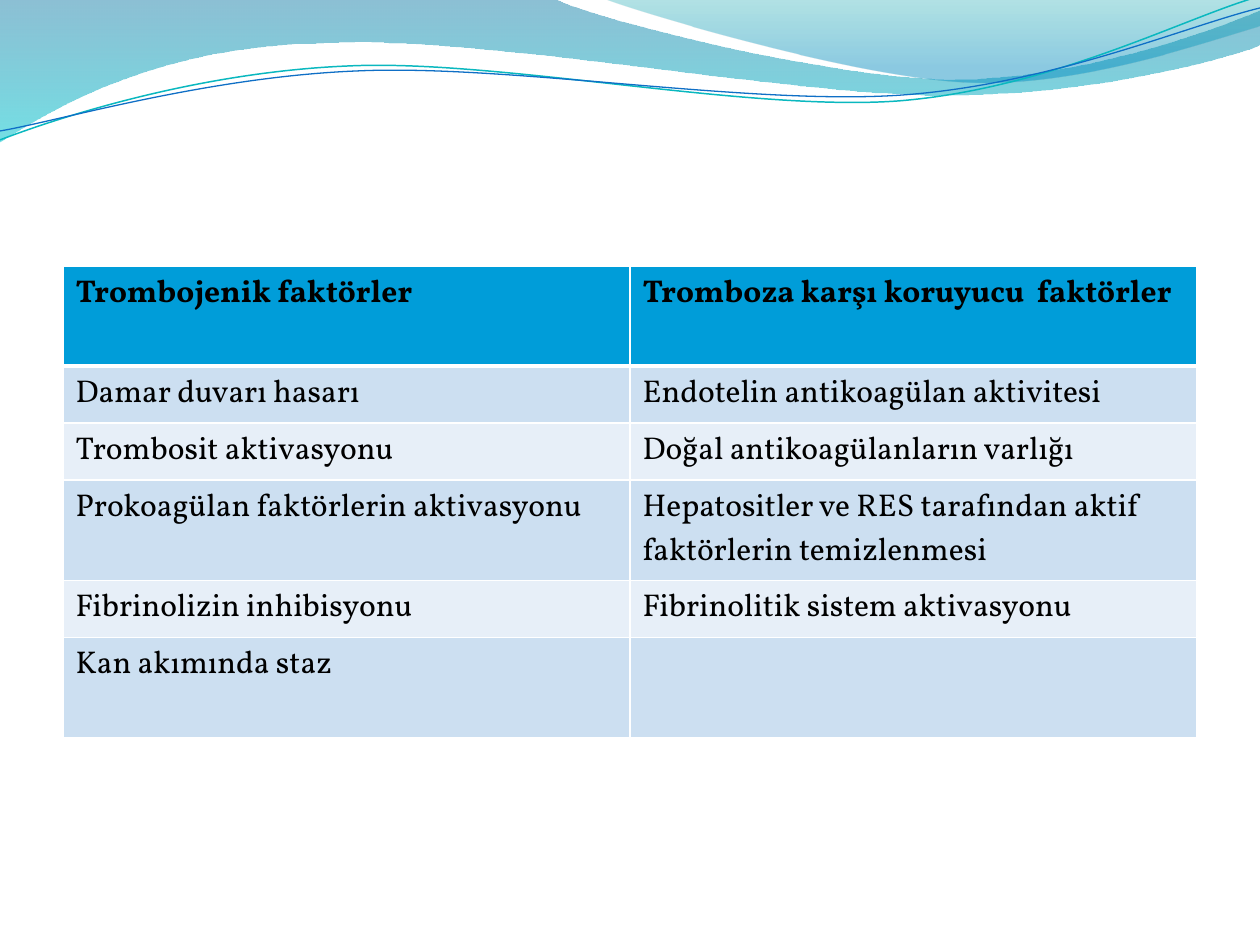
from math import cos, radians, sin

from lxml.etree import SubElement
from pptx import Presentation
from pptx.dml.color import RGBColor
from pptx.oxml.ns import qn
from pptx.util import Pt

PX = 914400 / 126
WHITE = RGBColor(0xFF, 0xFF, 0xFF)
BLACK = RGBColor(0x00, 0x00, 0x00)
HEADER = RGBColor(0x00, 0x9D, 0xD9)
BAND_DARK = RGBColor(0xCC, 0xDF, 0xF1)
BAND_LIGHT = RGBColor(0xE7, 0xEF, 0xF8)
BLUE = RGBColor(0x00, 0x74, 0xA1)
AQUA = RGBColor(0x00, 0xC6, 0xCF)
TEAL = RGBColor(0x00, 0xA1, 0xA9)
SKY = RGBColor(0x00, 0x8B, 0xBF)
TEAL_LINE = RGBColor(0x0A, 0xB8, 0xBF)
BLUE_LINE = RGBColor(0x0F, 0x6F, 0xC6)
TILT = 357.3


def px(n):
    return round(n * PX)


def add_curve(s, start, segments, close, tilt=0):
    a = radians(tilt)

    def level(point):
        x, y = point
        return px(x * cos(a) + y * sin(a)), px(y * cos(a) - x * sin(a))

    fb = s.shapes.build_freeform(*level(start), scale=1.0)
    fb.add_line_segments([level(seg[-1]) for seg in segments], close=close)
    sp = fb.convert_to_shape()
    sp.shadow.inherit = False
    for line, seg in zip(list(sp.element.iter(qn("a:lnTo"))), segments):
        if len(seg) == 3:
            line.tag = qn("a:cubicBezTo")
            line.clear()
            for x, y in map(level, seg):
                SubElement(line, qn("a:pt"), x=str(x - sp.left), y=str(y - sp.top))
    cx, cy = sp.left + sp.width / 2, sp.top + sp.height / 2
    sp.left = round(cx * cos(a) - cy * sin(a) - sp.width / 2)
    sp.top = round(cx * sin(a) + cy * cos(a) - sp.height / 2)
    sp.rotation = tilt
    return sp


prs = Presentation()
prs.slide_width, prs.slide_height = px(1260), px(945)
s = prs.slides.add_slide(prs.slide_layouts[6])

bands = [
    ((0, 0),
     [[(554, -1)],
      [(600, 21), (837, 79), (955, 79)],
      [(1075, 79), (1207, 33), (1260, 11)],
      [(1261, 45)],
      [(1239, 55), (1096, 96), (940, 95)],
      [(784, 95), (481, 35), (324, 43)],
      [(163, 45), (58, 105), (-1, 142)]],
     [(0, BLUE, 45), (1, AQUA, 55)]),
    ((604, -1),
     [[(642, 14), (859, 78), (969, 82)],
      [(1079, 87), (1211, 40), (1260, 26)],
      [(1260, 0)]],
     [(0, TEAL, 30), (0.8, SKY, 45)]),
]
for start, segments, stops in bands:
    sp = add_curve(s, start, segments, True)
    sp.line.fill.background()
    sp.fill.gradient()
    sp.fill.gradient_angle = 270
    for stop, (pos, color, _) in zip(sp.fill.gradient_stops, stops):
        stop.position = pos
        stop.color.rgb = color
    for clr, (_, _, opacity) in zip(sp.element.spPr.iter(qn("a:srgbClr")), stops):
        SubElement(clr, qn("a:alpha"), val=str(opacity * 1000))

waves = [
    ((0, 140),
     [[(60, 117), (199, 72), (349, 66)],
      [(498, 59), (747, 112), (898, 101)],
      [(1050, 89), (1182, 19), (1257, -3)]],
     TEAL_LINE, 0.85),
    ((0, 131),
     [[(59, 121), (207, 77), (357, 71)],
      [(508, 64), (752, 106), (903, 95)],
      [(1053, 84), (1186, 26), (1260, 8)]],
     BLUE_LINE, 0.75),
]
for start, segments, color, width in waves:
    sp = add_curve(s, start, segments, False, TILT)
    sp.fill.background()
    sp.line.color.rgb = color
    sp.line.width = Pt(width)

rows = [
    ("Trombojenik faktörler", "Tromboza karşı koruyucu  faktörler", 100),
    ("Damar duvarı hasarı", "Endotelin antikoagülan aktivitesi", 57),
    ("Trombosit aktivasyonu", "Doğal antikoagülanların varlığı", 57),
    ("Prokoagülan faktörlerin aktivasyonu",
     "Hepatositler ve RES tarafından aktif faktörlerin temizlenmesi", 100),
    ("Fibrinolizin inhibisyonu", "Fibrinolitik sistem aktivasyonu", 57),
    ("Kan akımında staz", "", 100),
]
height = sum(row[-1] for row in rows)
table = s.shapes.add_table(len(rows), 2, px(63), px(266), px(1134), px(height)).table
for i, (*texts, row_height) in enumerate(rows):
    table.rows[i].height = px(row_height)
    for j, text in enumerate(texts):
        cell = table.cell(i, j)
        tcPr = cell._tc.get_or_add_tcPr()
        for side in "LRB" if i == 1 else "LRTB":
            width = Pt(3 if i == 0 and side == "B" else 1)
            ln = SubElement(tcPr, qn(f"a:ln{side}"), w=str(width))
            SubElement(SubElement(ln, qn("a:solidFill")), qn("a:srgbClr"), val=str(WHITE))
        cell.fill.solid()
        cell.fill.fore_color.rgb = HEADER if i == 0 else BAND_DARK if i % 2 else BAND_LIGHT
        if text:
            r = cell.text_frame.paragraphs[0].add_run()
            r.text = text
            r.font.name = "Vollkorn"
            r.font.size = Pt(18)
            r.font.bold = i == 0
            r.font.color.rgb = BLACK

prs.save("out.pptx")
